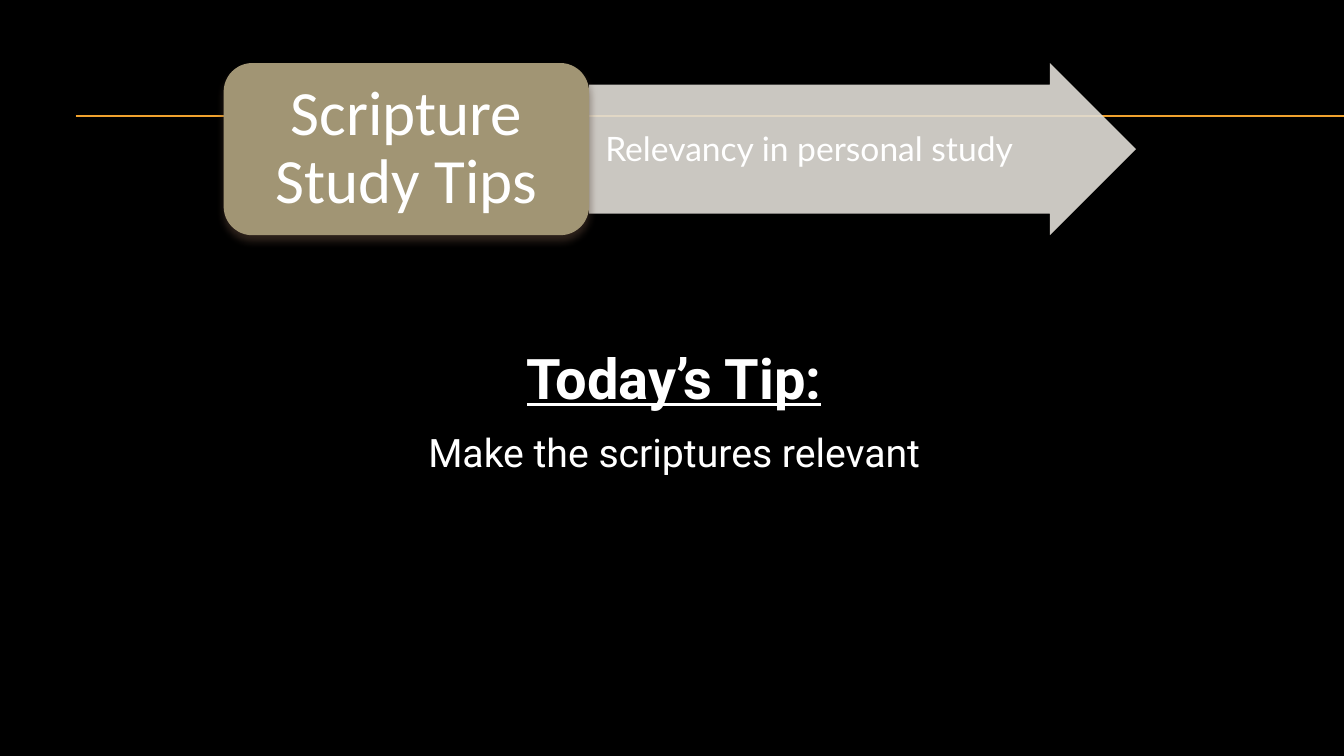
from dataclasses import dataclass

from lxml import etree
from pptx import Presentation
from pptx.dml.color import RGBColor
from pptx.enum.shapes import MSO_CONNECTOR as Connector, MSO_SHAPE as Preset
from pptx.enum.text import MSO_ANCHOR as Anchor, PP_ALIGN as Align
from pptx.oxml import parse_xml
from pptx.oxml.ns import nsdecls, qn
from pptx.shapes.autoshape import Shape
from pptx.slide import Slide
from pptx.util import Emu, Pt

EMU_PER_PX = 9525
SLIDE_WIDTH, SLIDE_HEIGHT = 1280, 720
BANNER_TOP, BANNER_HEIGHT = 60, 164
TITLE_LEFT, TITLE_WIDTH = 213, 348
COLORS = {
    "background": "000000",
    "rule": "F0A22E",
    "arrow": "E0DDD6",
    "title": "A19574",
    "shadow": "4E3B30",
    "text": "FFFFFF",
}


@dataclass(frozen=True)
class Box:
    left: int
    top: int
    width: int
    height: int

    def emu(self) -> list[Emu]:
        return [px(n) for n in (self.left, self.top, self.width, self.height)]


@dataclass(frozen=True)
class Line:
    """One paragraph and its formatting."""
    text: str
    font: str
    size: int
    align: Align = Align.LEFT
    spacing: float = 1.0
    before: float = 0
    heading: bool = False


def px(length: int) -> Emu:
    return Emu(length * EMU_PER_PX)


def color(name: str) -> RGBColor:
    return RGBColor.from_string(COLORS[name])


def write(shape: Shape, lines: list[Line]) -> None:
    frame = shape.text_frame
    frame.word_wrap = True
    frame.text = "\n".join(line.text for line in lines)
    for paragraph, line in zip(frame.paragraphs, lines):
        paragraph.alignment = line.align
        paragraph.line_spacing = line.spacing
        paragraph.space_before = Pt(line.before)
        font = paragraph.runs[0].font
        font.name, font.size = line.font, Pt(line.size)
        font.bold = font.underline = line.heading
        font.color.rgb = color("text")


def add_text(slide: Slide, box: Box, lines: list[Line]) -> None:
    write(slide.shapes.add_textbox(*box.emu()), lines)


def add_block(slide: Slide, preset: Preset, box: Box, fill: str) -> Shape:
    shape = slide.shapes.add_shape(preset, *box.emu())
    shape.shadow.inherit = False
    shape.fill.solid()
    shape.fill.fore_color.rgb = color(fill)
    shape.line.fill.background()
    return shape


def add_rule(slide: Slide, y: int) -> None:
    rule = slide.shapes.add_connector(
        Connector.STRAIGHT, px(72), px(y), px(SLIDE_WIDTH), px(y))
    rule.line.color.rgb = color("rule")
    rule.line.width = Pt(0.75)
    etree.SubElement(rule._element.spPr, qn("a:effectLst"))


def add_arrow(slide: Slide) -> None:
    box = Box(TITLE_LEFT + TITLE_WIDTH, BANNER_TOP, 521, BANNER_HEIGHT)
    arrow = add_block(slide, Preset.RIGHT_ARROW, box, "arrow")
    arrow.adjustments[0], arrow.adjustments[1] = 0.75, 0.5
    fill_color = arrow._element.spPr.find(f".//{qn('a:srgbClr')}")
    etree.SubElement(fill_color, qn("a:alpha"), val="90000")


def add_title(slide: Slide) -> None:
    box = Box(TITLE_LEFT, BANNER_TOP, TITLE_WIDTH, BANNER_HEIGHT)
    title = add_block(slide, Preset.ROUNDED_RECTANGLE, box, "title")
    title._element.spPr.find(qn("a:effectLst")).append(parse_xml(
        f'<a:outerShdw {nsdecls("a")} blurRad="{Pt(6)}" dist="{Pt(4)}" '
        f'dir="5400000" rotWithShape="0"><a:srgbClr val="{COLORS["shadow"]}">'
        '<a:alpha val="60000"/></a:srgbClr></a:outerShdw>'))
    frame = title.text_frame
    frame.vertical_anchor = Anchor.MIDDLE
    frame.margin_left = frame.margin_right = px(26)
    frame.margin_top = frame.margin_bottom = px(17)
    write(title, [Line("Scripture Study Tips", "Calibri", 45, Align.CENTER, 0.9)])


def main() -> None:
    presentation = Presentation()
    presentation.slide_width = px(SLIDE_WIDTH)
    presentation.slide_height = px(SLIDE_HEIGHT)
    slide = presentation.slides.add_slide(presentation.slide_layouts[6])
    slide.background.fill.solid()
    slide.background.fill.fore_color.rgb = color("background")

    for y in (110, 111):
        add_rule(slide, y)
    add_arrow(slide)
    add_title(slide)
    add_text(slide, Box(567, 117, 535, 49),
             [Line("Relevancy in personal study", "Lato", 24)])
    add_text(slide, Box(202, 315, 880, 198), [
        Line("Today’s Tip:", "Roboto", 40, Align.CENTER, 1.11, 9.3, heading=True),
        Line("Make the scriptures relevant", "Roboto", 28, Align.CENTER, 1.11, 9.3),
    ])
    presentation.save("out.pptx")


if __name__ == "__main__":
    main()
